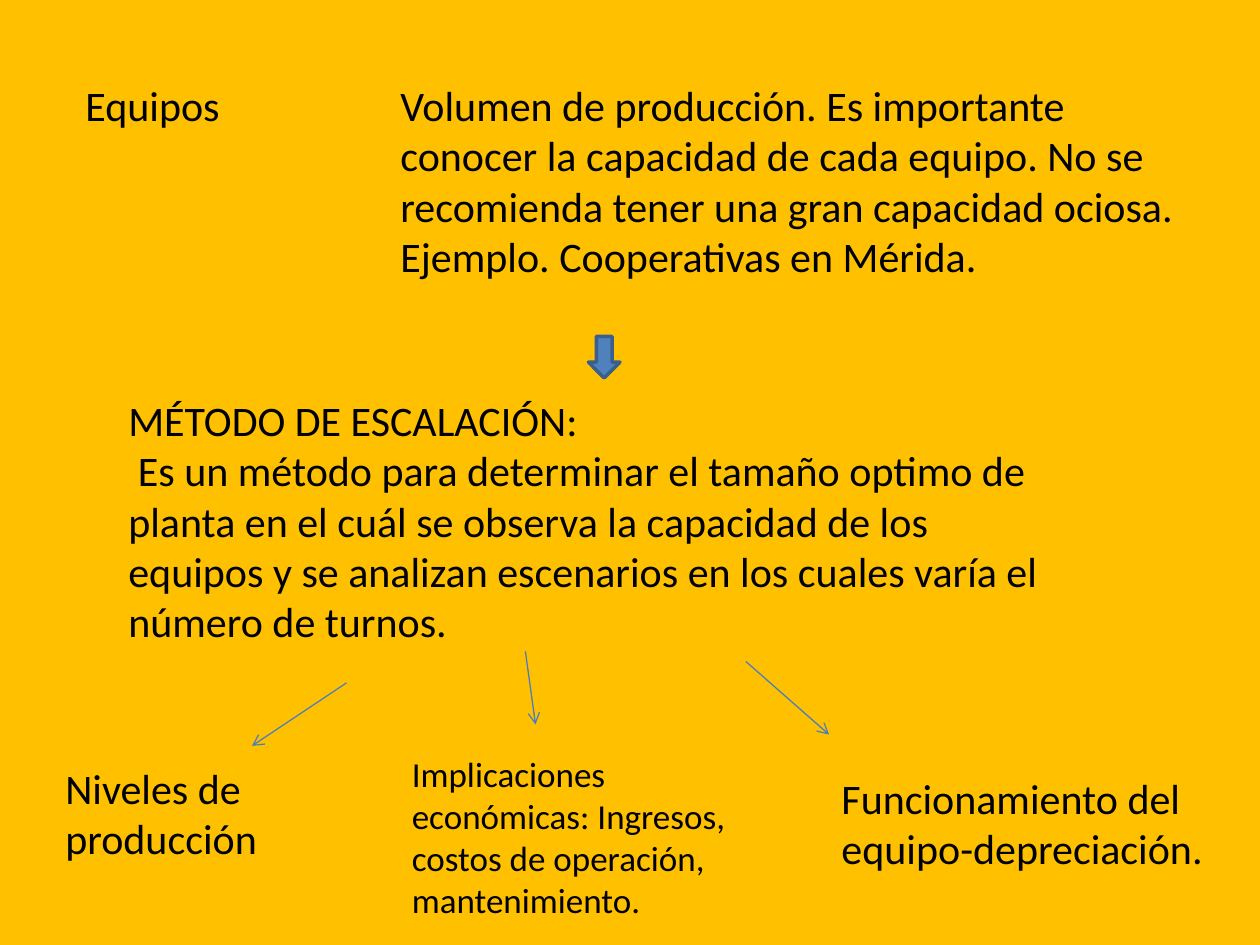
import lxml.etree
import pptx
import pptx.dml.color
import pptx.enum.shapes
import pptx.enum.text
import pptx.oxml.ns
import pptx.util
from dataclasses import dataclass
from pptx.util import Inches


@dataclass(frozen=True)
class Theme:
    background: str = "FFC000"
    text: str = "000000"
    block_fill: str = "4F81BD"
    block_line: str = "3A5F8C"
    arrow: str = "4B7EBC"
    font: str = "Calibri"
    body: int = 24
    small: int = 20


theme = Theme()


def color(value):
    return pptx.dml.color.RGBColor.from_string(value)


deck = pptx.Presentation()
deck.slide_width = Inches(10)
deck.slide_height = Inches(7.5)
page = deck.slides.add_slide(deck.slide_layouts[6])
page.background.fill.solid()
page.background.fill.fore_color.rgb = color(theme.background)

texts = [
    (0.58, 0.58, 2.17, 0.5, theme.body, "Equipos"),
    (3.08, 0.58, 6.5, 1.72, theme.body,
     "Volumen de producción. Es importante conocer la capacidad de cada equipo. "
     "No se recomienda tener una gran capacidad ociosa.\n"
     "Ejemplo. Cooperativas en Mérida."),
    (0.92, 3.08, 7.42, 2.12, theme.body,
     "MÉTODO DE ESCALACIÓN:\n"
     " Es un método para determinar el tamaño optimo de planta en el cuál se observa "
     "la capacidad de los equipos y se analizan escenarios en los cuales varía el "
     "número de turnos."),
    (3.17, 5.92, 3.08, 1.45, theme.small,
     "Implicaciones económicas: Ingresos, costos de operación, mantenimiento."),
    (0.42, 6, 2.97, 0.91, theme.body, "Niveles de producción"),
    (6.58, 6.08, 3.42, 0.91, theme.body, "Funcionamiento del equipo-depreciación."),
]
for left, top, width, height, size, words in texts:
    box = page.shapes.add_textbox(Inches(left), Inches(top), Inches(width), Inches(height))
    frame = box.text_frame
    frame.word_wrap = True
    frame.auto_size = pptx.enum.text.MSO_AUTO_SIZE.SHAPE_TO_FIT_TEXT
    frame.text = words
    for para in frame.paragraphs:
        for span in para.runs:
            span.font.name = theme.font
            span.font.size = pptx.util.Pt(size)
            span.font.color.rgb = color(theme.text)

down_arrow = page.shapes.add_shape(
    pptx.enum.shapes.MSO_SHAPE.DOWN_ARROW,
    Inches(4.67), Inches(2.67), Inches(0.25), Inches(0.33))
down_arrow.shadow.inherit = False
down_arrow.fill.solid()
down_arrow.fill.fore_color.rgb = color(theme.block_fill)
down_arrow.line.color.rgb = color(theme.block_line)
down_arrow.line.width = pptx.util.Pt(2)

branches = [
    (2.75, 5.42, 2, 5.92),
    (4.17, 5.17, 4.25, 5.75),
    (5.92, 5.25, 6.58, 5.83),
]
for start_x, start_y, end_x, end_y in branches:
    branch = page.shapes.add_connector(
        pptx.enum.shapes.MSO_CONNECTOR.STRAIGHT,
        Inches(start_x), Inches(start_y), Inches(end_x), Inches(end_y))
    branch.line.color.rgb = color(theme.arrow)
    branch.line.width = pptx.util.Pt(0.75)
    outline = branch.line._get_or_add_ln()
    lxml.etree.SubElement(outline, pptx.oxml.ns.qn("a:tailEnd"), type="arrow")
    lxml.etree.SubElement(outline.getparent(), pptx.oxml.ns.qn("a:effectLst"))

deck.save("out.pptx")
